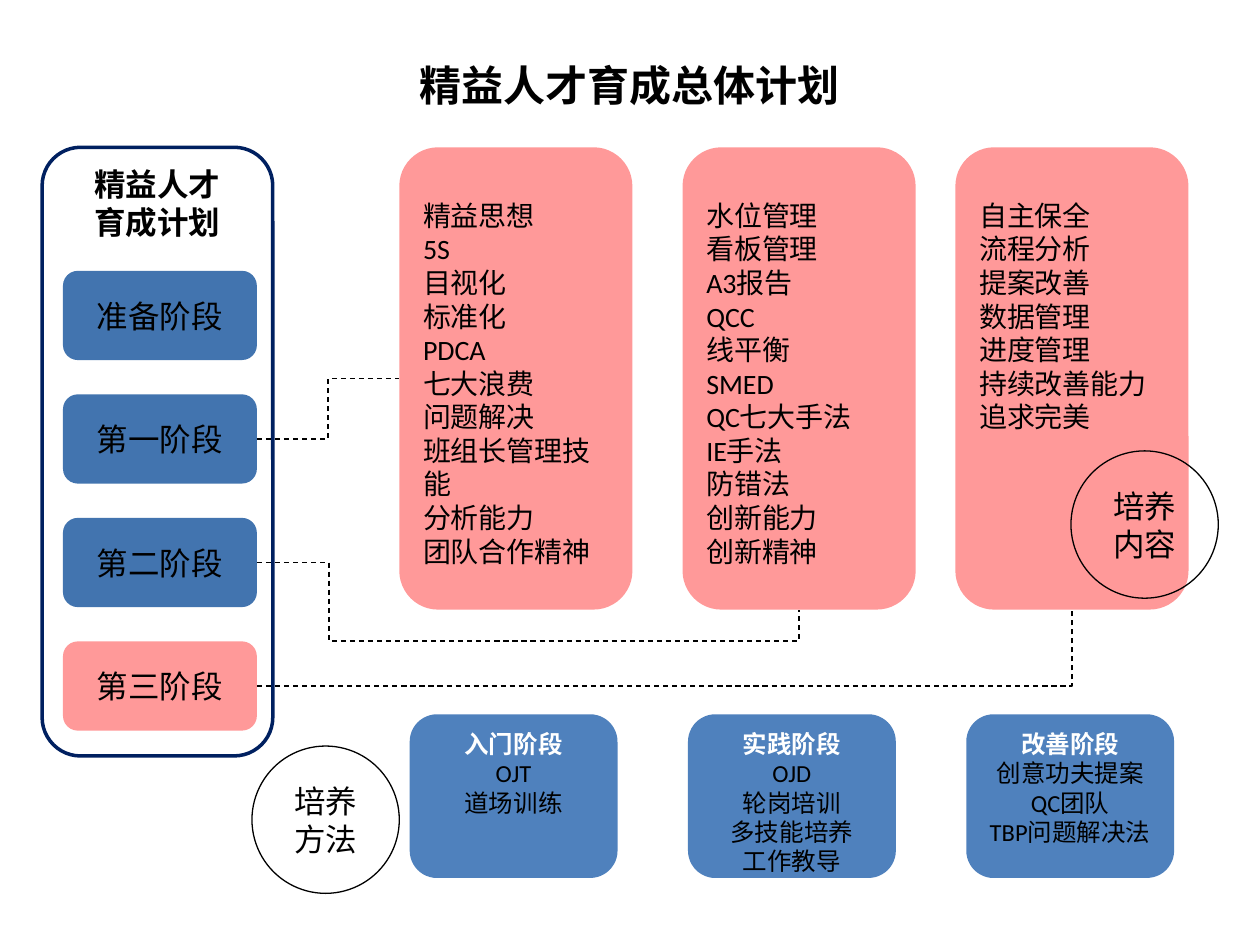
from lxml import etree
from pptx import Presentation
from pptx.dml.color import RGBColor
from pptx.enum.dml import MSO_LINE
from pptx.enum.shapes import MSO_CONNECTOR, MSO_SHAPE
from pptx.enum.text import MSO_ANCHOR, PP_ALIGN
from pptx.oxml.ns import qn
from pptx.util import Cm, Pt

ROUND, OVAL = MSO_SHAPE.ROUNDED_RECTANGLE, MSO_SHAPE.OVAL
LEFT, CENTER = PP_ALIGN.LEFT, PP_ALIGN.CENTER
TOP, MIDDLE = MSO_ANCHOR.TOP, MSO_ANCHOR.MIDDLE
ELBOW, DASH = MSO_CONNECTOR.ELBOW, MSO_LINE.DASH
LEFT_SITE, BOTTOM_SITE, RIGHT_SITE = 1, 2, 3
BLACK, WHITE, NAVY = "000000", "FFFFFF", "002060"
PINK, STAGE_BLUE, METHOD_BLUE = "FF9999", "4274AF", "4F81BD"
PANEL_TOP = 2.97

STAGES = [
    ("准备阶段", STAGE_BLUE),
    ("第一阶段", STAGE_BLUE),
    ("第二阶段", STAGE_BLUE),
    ("第三阶段", PINK),
]
CONTENTS = [
    (8.05, ["精益思想", "5S", "目视化", "标准化", "PDCA", "七大浪费", "问题解决",
            "班组长管理技能", "分析能力", "团队合作精神"]),
    (13.76, ["水位管理", "看板管理", "A3报告", "QCC", "线平衡", "SMED",
             "QC七大手法", "IE手法", "防错法", "创新能力", "创新精神"]),
    (19.26, ["自主保全", "流程分析", "提案改善", "数据管理", "进度管理",
             "持续改善能力", "追求完美"]),
]
METHODS = [
    (["入门阶段", "OJT", "道场训练"], 0.25),
    (["实践阶段", "OJD", "轮岗培训", "多技能培养", "工作教导"], 0.25),
    (["改善阶段", "创意功夫提案", "QC团队", "TBP问题解决法"], 0),
]


def rgb(value):
    """Turn a hex string into a colour."""
    return RGBColor.from_string(value)


def add_line(p, text, size, color=BLACK, bold=False, align=CENTER, font="Calibri"):
    """Write one run of text into a paragraph."""
    p.alignment = align
    r = p.add_run()
    r.text = text
    r.font.name = font
    r.font.size = Pt(size)
    r.font.bold = bold
    r.font.color.rgb = rgb(color)


def paragraphs(tf, count):
    """Return the given number of paragraphs in a text frame."""
    return [tf.paragraphs[0]] + [tf.add_paragraph() for _ in range(count - 1)]


def add_block(s, kind, box, fill=None, line=None, width=0.75, anchor=TOP,
              side=0.25, top=0.13):
    """Draw a flat shape that is ready for text."""
    sp = s.shapes.add_shape(kind, *map(Cm, box))
    sp.shadow.inherit = False
    if fill:
        sp.fill.solid()
        sp.fill.fore_color.rgb = rgb(fill)
    else:
        sp.fill.background()
    if line:
        sp.line.color.rgb = rgb(line)
        sp.line.width = Pt(width)
    else:
        sp.line.fill.background()
    tf = sp.text_frame
    tf.word_wrap = True
    tf.vertical_anchor = anchor
    tf.margin_left = tf.margin_right = Cm(side)
    tf.margin_top, tf.margin_bottom = Cm(top), Cm(0.13)
    return sp


def add_title(s, text):
    """Write the slide title."""
    tf = s.shapes.add_textbox(Cm(7.62), Cm(1.07), Cm(10.16), Cm(1.3)).text_frame
    tf.word_wrap = True
    add_line(tf.paragraphs[0], text, 24, bold=True, font="Noto Sans CJK SC")


def add_stage(s, index, text, fill):
    """Draw one stage of the plan column."""
    box = (1.27, 5.46 + 2.49 * index, 3.91, 1.8)
    sp = add_block(s, ROUND, box, fill, anchor=MIDDLE)
    add_line(sp.text_frame.paragraphs[0], text, 18)
    return sp


def add_frame(s, lines):
    """Draw the outlined plan column with its heading."""
    sp = add_block(s, ROUND, (0.85, PANEL_TOP, 4.65, 12.27), line=NAVY, width=2, side=0.1)
    for p, text in zip(paragraphs(sp.text_frame, len(lines)), lines):
        add_line(p, text, 18, bold=True)


def add_content(s, left, lines):
    """Draw one panel of training content."""
    sp = add_block(s, ROUND, (left, PANEL_TOP, 4.7, 9.32), PINK, top=0.8)
    for p, text in zip(paragraphs(sp.text_frame, len(lines)), lines):
        add_line(p, text, 16, align=LEFT)
    return sp


def add_method(s, index, lines, side):
    """Draw one card of training methods with a white heading."""
    sp = add_block(s, ROUND, (8.26 + 5.61 * index, 14.4, 4.19, 3.3), METHOD_BLUE, side=side)
    for i, p in enumerate(paragraphs(sp.text_frame, len(lines))):
        add_line(p, lines[i], 14, BLACK if i else WHITE, bold=i == 0)


def add_circle(s, left, top, text):
    """Draw a circled label."""
    sp = add_block(s, OVAL, (left, top, 2.97, 2.97), line=BLACK, anchor=MIDDLE)
    add_line(sp.text_frame.paragraphs[0], text, 18)


def add_link(s, stage, panel, site, preset, adjustments=()):
    """Join a stage to its content panel with a dashed elbow."""
    c = s.shapes.add_connector(ELBOW, 0, 0, 0, 0)
    c.begin_connect(stage, RIGHT_SITE)
    c.end_connect(panel, site)
    c.line.color.rgb = rgb(BLACK)
    c.line.width = Pt(0.75)
    c.line.dash_style = DASH
    props = c._element.spPr
    geometry = props.find(qn("a:prstGeom"))
    geometry.set("prst", preset)
    guides = geometry.find(qn("a:avLst"))
    for i, value in enumerate(adjustments, 1):
        etree.SubElement(guides, qn("a:gd"), name=f"adj{i}", fmla=f"val {value}")
    etree.SubElement(props, qn("a:effectLst"))


def main():
    """Build the talent development plan slide."""
    prs = Presentation()
    prs.slide_width, prs.slide_height = Cm(25.4), Cm(19.05)
    s = prs.slides.add_slide(prs.slide_layouts[6])
    stages = [add_stage(s, i, *stage) for i, stage in enumerate(STAGES)]
    add_frame(s, ["精益人才", "育成计划"])
    panels = [add_content(s, *content) for content in CONTENTS]
    for i, method in enumerate(METHODS):
        add_method(s, i, *method)
    add_link(s, stages[1], panels[0], LEFT_SITE, "bentConnector3", [50000])
    add_link(s, stages[2], panels[1], BOTTOM_SITE, "bentConnector4", [13300, 166700])
    add_link(s, stages[3], panels[2], BOTTOM_SITE, "bentConnector2")
    add_circle(s, 5.08, 15.04, "培养方法")
    add_circle(s, 21.59, 9.09, "培养内容")
    add_title(s, "精益人才育成总体计划")
    prs.save("out.pptx")


if __name__ == "__main__":
    main()
